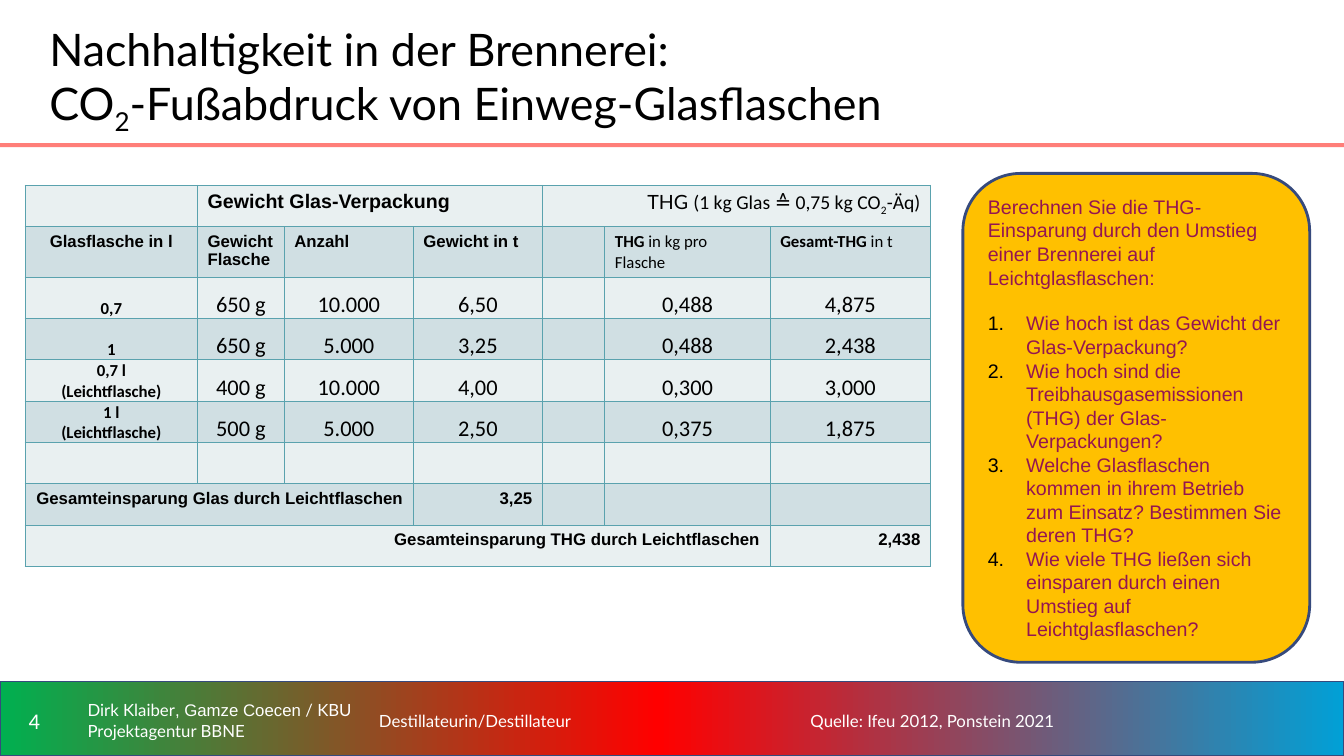
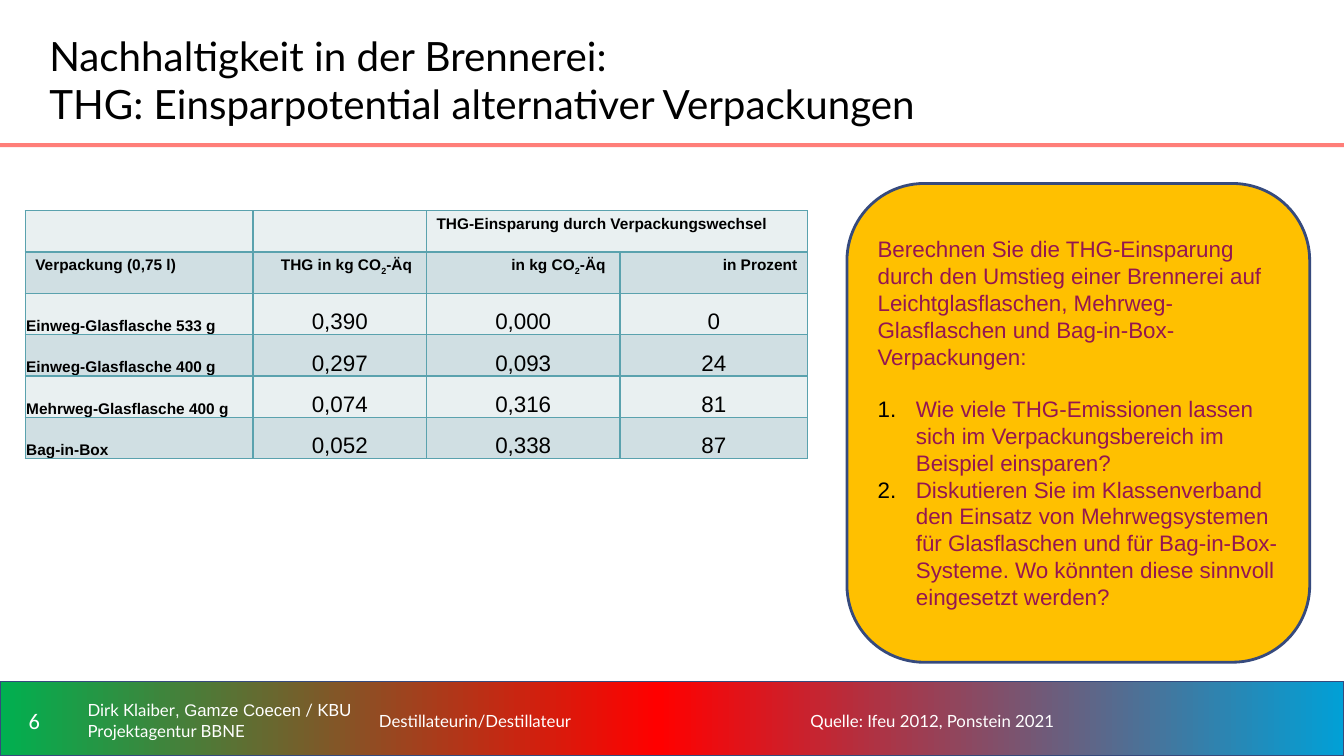
from copy import deepcopy
from dataclasses import dataclass, replace

from lxml import etree
from pptx import Presentation
from pptx.dml.color import RGBColor
from pptx.enum import shapes, text
from pptx.oxml.ns import qn
from pptx.util import Inches, Pt

LEFT, CENTER, RIGHT = text.PP_ALIGN.LEFT, text.PP_ALIGN.CENTER, text.PP_ALIGN.RIGHT


@dataclass(frozen=True)
class Type:
    size: float
    font: str
    color: str = "000000"
    bold: bool = False


@dataclass(frozen=True)
class Look:
    """How a table cell sets its text; compact cells sit on the bottom border."""
    type: Type
    align: int = LEFT
    compact: bool = False


@dataclass(frozen=True)
class Cell:
    content: object
    look: Look
    span: int = 1


class Theme:
    outline = "364A7D"
    rule = "FF7E79"
    task_fill = "FFC000"
    task_number = "000000"
    grid = "5AA2AE"
    bands = ("E9F0F1", "D0DFE3")
    footer_stops = ((0, "00B050"), (49, "FF0000"), (100, "01A0D6"))
    title = Type(32, "Lato")
    footer = Type(12, "Lato", "FFFFFF")
    number = Type(16, "Calibri", "FFFFFF")
    task = Type(14, "Arial", "941651")
    group = Type(14, "Arial", bold=True)
    head = Type(12, "Arial", bold=True)
    small_head = Type(11, "Arial", bold=True)
    label = Type(12, "Calibri", bold=True)
    value = Type(16, "Calibri")


def rgb(value):
    return RGBColor.from_string(value)


def set_font(font, style):
    font.size, font.name, font.bold = Pt(style.size), style.font, style.bold
    font.color.rgb = rgb(style.color)


def write(paragraph, content, style, align=LEFT):
    """Content is a string or (string, Type) pairs; ₂ becomes a lowered 2."""
    paragraph.alignment = align
    set_font(paragraph.font, style)
    runs = [(content, style)] if isinstance(content, str) else content
    for words, run_style in runs:
        for line_index, line in enumerate(words.split("\n")):
            if line_index:
                paragraph.add_line_break()
            for part_index, part in enumerate(line.replace("₂", "|₂|").split("|")):
                if not part:
                    continue
                run = paragraph.add_run()
                run.text = "2" if part_index % 2 else part
                if run_style != style:
                    set_font(run.font, run_style)
                if part_index % 2:
                    run.font._element.set("baseline", "-25000")


def add_number(paragraph, color):
    """Number the paragraph automatically, with a hanging indent."""
    properties = paragraph._p.get_or_add_pPr()
    hang = Inches(0.38)
    properties.set("marL", str(hang))
    properties.set("indent", str(-hang))
    bullet_color = etree.SubElement(properties, qn("a:buClr"))
    etree.SubElement(bullet_color, qn("a:srgbClr")).set("val", color)
    etree.SubElement(properties, qn("a:buFont")).set("typeface", "+mj-lt")
    etree.SubElement(properties, qn("a:buAutoNum")).set("type", "arabicPeriod")


def add_borders(cell, color):
    properties = cell._tc.get_or_add_tcPr()
    for position, side in enumerate(("lnL", "lnR", "lnT", "lnB")):
        line = etree.Element(qn(f"a:{side}"), w=str(Pt(1)))
        fill = etree.SubElement(line, qn("a:solidFill"))
        etree.SubElement(fill, qn("a:srgbClr")).set("val", color)
        properties.insert(position, line)


class Deck:
    def __init__(self, theme):
        self.theme = theme
        self.presentation = Presentation()
        self.presentation.slide_width = Inches(13.33)
        self.presentation.slide_height = Inches(7.5)
        self.slide = None

    def start(self, title, number, title_size):
        """Open a slide with title, red rule and footer band."""
        theme = self.theme
        self.slide = self.presentation.slides.add_slide(self.presentation.slide_layouts[6])
        self.footer_band()
        self.shape(shapes.MSO_SHAPE.RECTANGLE, 0, 1.42, 13.33, 0.04, theme.rule)
        self.text(0.39, 0.2, 9.61, 1.18, title, replace(theme.title, size=title_size))
        arial = replace(theme.footer, font="Arial")
        authors = [("Dirk Klaiber", theme.footer), (", Gamze Coecen", arial),
                   (" / KBU\nProjektagentur BBNE", theme.footer)]
        self.text(0, 6.84, 0.68, 0.61, number, theme.number, CENTER)
        self.text(0.77, 6.84, 2.89, 0.61, authors, theme.footer)
        for left, width, words in ((3.66, 4.19, "Destillateurin/Destillateur"),
                                   (7.94, 5.05, "Quelle: Ifeu 2012, Ponstein 2021")):
            self.text(left, 6.84, width, 0.61, words, theme.footer, spacing=1.1)

    def shape(self, preset, left, top, width, height, fill, line_width=0):
        shape = self.slide.shapes.add_shape(
            preset, Inches(left), Inches(top), Inches(width), Inches(height))
        shape.shadow.inherit = False
        shape.fill.solid()
        shape.fill.fore_color.rgb = rgb(fill)
        if line_width:
            shape.line.color.rgb = rgb(self.theme.outline)
            shape.line.width = Pt(line_width)
        else:
            shape.line.fill.background()
        return shape

    def footer_band(self):
        theme = self.theme
        band = self.shape(shapes.MSO_SHAPE.RECTANGLE, 0, 6.76, 13.33, 0.74, theme.rule, 1)
        band.fill.gradient()
        band.fill.gradient_angle = 0
        stops = band._element.spPr.find(qn("a:gradFill")).find(qn("a:gsLst"))
        stops.append(deepcopy(stops[0]))
        for stop, (position, color) in zip(band.fill.gradient_stops, theme.footer_stops):
            stop.position = position / 100
            stop.color.rgb = rgb(color)

    def text(self, left, top, width, height, content, style, align=LEFT, spacing=None):
        box = self.slide.shapes.add_textbox(
            Inches(left), Inches(top), Inches(width), Inches(height))
        frame = box.text_frame
        frame.word_wrap = True
        frame.vertical_anchor = text.MSO_ANCHOR.MIDDLE
        paragraph = frame.paragraphs[0]
        write(paragraph, content, style, align)
        if spacing:
            paragraph.line_spacing = spacing

    def task(self, left, top, width, height, intro, questions, size):
        """Rounded box with an introduction and numbered questions."""
        box = self.shape(shapes.MSO_SHAPE.ROUNDED_RECTANGLE, left, top, width, height,
                         self.theme.task_fill, 2)
        style = replace(self.theme.task, size=size)
        frame = box.text_frame
        frame.word_wrap = True
        frame.vertical_anchor = text.MSO_ANCHOR.MIDDLE
        frame.margin_left = frame.margin_right = Inches(0.08)
        frame.margin_top = frame.margin_bottom = 0
        write(frame.paragraphs[0], intro, style)
        for index, question in enumerate(questions):
            paragraph = frame.add_paragraph()
            if index == 0:
                paragraph.space_before = Pt(round(size * 1.15))
            add_number(paragraph, self.theme.task_number)
            write(paragraph, question, style)

    def table(self, left, top, widths, rows):
        row_height = 0.41
        frame = self.slide.shapes.add_table(
            len(rows), len(widths), Inches(left), Inches(top),
            Inches(sum(widths)), Inches(row_height * len(rows)))
        table = frame.table
        table.first_row = table.horz_banding = False
        for column, width in zip(table.columns, widths):
            column.width = Inches(width)
        for row_index, entries in enumerate(rows):
            table.rows[row_index].height = Inches(row_height)
            for cell in table.rows[row_index].cells:
                cell.fill.solid()
                cell.fill.fore_color.rgb = rgb(self.theme.bands[row_index % 2])
                add_borders(cell, self.theme.grid)
            column_index = 0
            for entry in entries:
                cell = table.cell(row_index, column_index)
                if entry.span > 1:
                    cell.merge(table.cell(row_index, column_index + entry.span - 1))
                self.fill_cell(cell, entry)
                column_index += entry.span

    def fill_cell(self, cell, entry):
        look = entry.look
        if look.compact:
            cell.vertical_anchor = text.MSO_ANCHOR.BOTTOM
            cell.margin_left = cell.margin_right = cell.margin_top = Inches(0.01)
            cell.margin_bottom = 0
        write(cell.text_frame.paragraphs[0], entry.content, look.type, look.align)


def glass_bottles(deck):
    theme = deck.theme
    deck.start("Nachhaltigkeit in der Brennerei:\nCO₂-Fußabdruck von Einweg-Glasflaschen",
               "4", 32)
    head, total = Look(theme.head), Look(theme.head, RIGHT)
    label = Look(theme.label, CENTER, True)
    value = Look(theme.value, CENTER, True)
    plain = replace(theme.label, bold=False)
    empty = Cell("", head)
    unit = replace(theme.group, font="Calibri", bold=False)
    ghg = [("THG ", replace(unit, font="Lato")), ("(1 kg Glas ≙ 0,75 kg CO₂-Äq)", unit)]
    rows = [
        [empty, Cell("Gewicht Glas-Verpackung", Look(theme.group), 3),
         Cell(ghg, Look(unit, RIGHT), 3)],
        [Cell("Glasflasche in l", Look(theme.head, CENTER)), Cell("Gewicht Flasche", head),
         Cell("Anzahl", head), Cell("Gewicht in t", head), empty,
         Cell([("THG", theme.label), (" in kg pro Flasche", plain)], Look(plain)),
         Cell([("Gesamt-THG", theme.label), (" in t", plain)], Look(plain))],
    ]
    bottles = [
        ("0,7", "650 g", "10.000", "6,50", "0,488", "4,875"),
        ("1", "650 g", "5.000", "3,25", "0,488", "2,438"),
        ("0,7 l\n(Leichtflasche)", "400 g", "10.000", "4,00", "0,300", "3,000"),
        ("1 l\n(Leichtflasche)", "500 g", "5.000", "2,50", "0,375", "1,875"),
    ]
    for name, *figures in bottles:
        values = [Cell(figure, value) for figure in figures]
        rows.append([Cell(name, label), *values[:3], empty, *values[3:]])
    rows += [
        [empty] * 7,
        [Cell("Gesamteinsparung Glas durch Leichtflaschen", total, 3), Cell("3,25", total),
         empty, empty, empty],
        [Cell("Gesamteinsparung THG durch Leichtflaschen", total, 6), Cell("2,438", total)],
    ]
    deck.table(0.25, 1.84, (1.71, 0.86, 1.28, 1.28, 0.62, 1.64, 1.59), rows)
    deck.task(9.55, 1.72, 3.44, 4.85,
              "Berechnen Sie die THG-Einsparung durch den Umstieg einer Brennerei auf "
              "Leichtglasflaschen:",
              ["Wie hoch ist das Gewicht der Glas-Verpackung?",
               "Wie hoch sind die Treibhausgasemissionen (THG) der Glas-Verpackungen?",
               "Welche Glasflaschen kommen in ihrem Betrieb zum Einsatz? "
               "Bestimmen Sie deren THG?",
               "Wie viele THG ließen sich einsparen durch einen Umstieg auf "
               "Leichtglasflaschen?"], 14)


def alternative_packaging(deck):
    theme = deck.theme
    deck.start("Nachhaltigkeit in der Brennerei:\n"
               "THG: Einsparpotential alternativer Verpackungen", "6", 28.8)
    head, unit = Look(theme.small_head), Look(theme.small_head, RIGHT)
    label = Look(theme.small_head, LEFT, True)
    value = Look(replace(theme.value, font="Arial"), CENTER, True)
    empty = Cell("", head)
    rows = [
        [empty, empty, Cell("THG-Einsparung durch Verpackungswechsel", head, 2)],
        [Cell("Verpackung (0,75 l)", head), Cell("THG in kg CO₂-Äq ", unit),
         Cell("in kg CO₂-Äq ", unit), Cell("in Prozent", unit)],
    ]
    packagings = [
        ("Einweg-Glasflasche 533 g", "0,390", "0,000", "0"),
        ("Einweg-Glasflasche 400 g", "0,297", "0,093", "24"),
        ("Mehrweg-Glasflasche 400 g", "0,074", "0,316", "81"),
        ("Bag-in-Box", "0,052", "0,338", "87"),
    ]
    for name, *figures in packagings:
        rows.append([Cell(name, label), *(Cell(figure, value) for figure in figures)])
    deck.table(0.25, 2.09, (2.26, 1.72, 1.92, 1.86), rows)
    deck.task(8.4, 1.82, 4.59, 4.75,
              "Berechnen Sie die THG-Einsparung durch den Umstieg einer Brennerei auf "
              "Leichtglasflaschen, Mehrweg-Glasflaschen und Bag-in-Box-Verpackungen:",
              ["Wie viele THG-Emissionen lassen sich im Verpackungsbereich im Beispiel "
               "einsparen?",
               "Diskutieren Sie im Klassenverband den Einsatz von Mehrwegsystemen für "
               "Glasflaschen und für Bag-in-Box-Systeme. Wo könnten diese sinnvoll "
               "eingesetzt werden?"], 16)


def main():
    deck = Deck(Theme())
    glass_bottles(deck)
    alternative_packaging(deck)
    deck.presentation.save("out.pptx")


if __name__ == "__main__":
    main()
